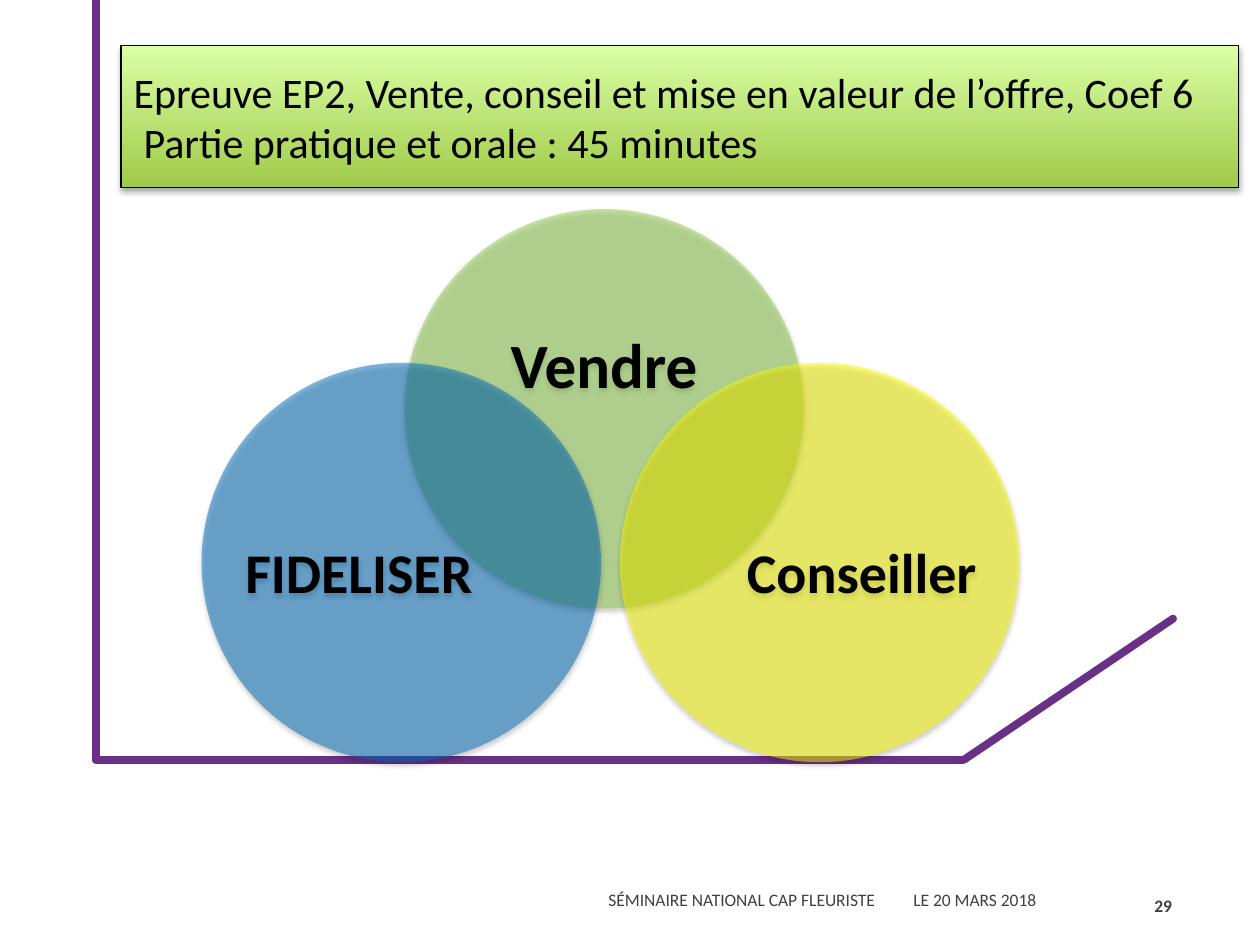
import pptx
import pptx.dml.color
import pptx.enum.dml
import pptx.enum.shapes
import pptx.enum.text
import pptx.util
from lxml import etree
from pptx.oxml.ns import qn

Inches, Pt = pptx.util.Inches, pptx.util.Pt
RGBColor = pptx.dml.color.RGBColor
ALIGN = pptx.enum.text.PP_ALIGN

BLACK = RGBColor(0x00, 0x00, 0x00)
GRAY = RGBColor(0x40, 0x40, 0x40)
PURPLE = RGBColor(0x68, 0x30, 0x86)
GREEN = RGBColor(0x92, 0xD0, 0x50)
YELLOW = RGBColor(0xFF, 0xFF, 0x00)
BLUE = RGBColor(0x00, 0x70, 0xC0)
TITLE_DARK = RGBColor(0xA0, 0xCA, 0x4A)
TITLE_LIGHT = RGBColor(0xDA, 0xFF, 0xA5)

# Content
TITLE = ["Epreuve EP2, Vente, conseil et mise en valeur de l’offre, Coef 6",
         "Partie pratique et orale : 45 minutes"]
FOOTER = "SÉMINAIRE NATIONAL CAP FLEURISTE\tLE 20 MARS 2018"
PAGE_NUMBER = "29"
FRAME_LINES = [(0.76, 6.03, 7.64, 6.03), (7.65, 6.03, 9.31, 4.91), (0.76, 6.02, 0.76, 0)]
DIAMETER = 3.17
# Label, colour, left, top, size, text margins measured from the circle's bounds
CIRCLES = [
    ("Vendre", GREEN, 3.21, 1.66, 36, (0.42, 0.55, 0.42, 1.19)),
    ("Conseiller", YELLOW, 4.92, 2.88, 32, (0.97, 0.82, 0.3, 0.61)),
    ("FIDELISER", BLUE, 1.6, 2.88, 32, (0.3, 0.82, 0.97, 0.61)),
]
# An oval's text area is the square inscribed in it
OVAL_INSET = DIAMETER * (1 - 0.5 ** 0.5) / 2


def write_text(shape, lines, size, color=BLACK, bold=False, align=ALIGN.LEFT,
               margins=(0.1, 0.05, 0.1, 0.05), spacing=None):
    frame = shape.text_frame
    frame.word_wrap = True
    frame.auto_size = pptx.enum.text.MSO_AUTO_SIZE.NONE
    frame.vertical_anchor = pptx.enum.text.MSO_ANCHOR.MIDDLE
    (frame.margin_left, frame.margin_top,
     frame.margin_right, frame.margin_bottom) = [Inches(value) for value in margins]
    frame.text = "\n".join(lines)
    for paragraph in frame.paragraphs:
        paragraph.alignment = align
        paragraph.line_spacing = spacing
        for run in paragraph.runs:
            run.font.name = "Calibri"
            run.font.size = Pt(size)
            run.font.bold = bold
            run.font.color.rgb = color


def add_shadow(shape, opacity, blur, distance):
    shape.shadow.inherit = False
    effects = shape._element.spPr.find(qn("a:effectLst"))
    shadow = etree.SubElement(effects, qn("a:outerShdw"), blurRad=str(Pt(blur)),
                              dist=str(Pt(distance)), dir="5400000", rotWithShape="0")
    color = etree.SubElement(shadow, qn("a:srgbClr"), val=str(BLACK))
    etree.SubElement(color, qn("a:alpha"), val=str(opacity * 1000))


def add_frame_line(slide, ends):
    line = slide.shapes.add_connector(pptx.enum.shapes.MSO_CONNECTOR.STRAIGHT,
                                      *[Inches(value) for value in ends])
    line.line.color.rgb = PURPLE
    line.line.width = Pt(4.5)
    line.line._ln.set("cap", "rnd")
    etree.SubElement(line._element.spPr, qn("a:effectLst"))


def add_circle(slide, label, color, left, top, size, margins):
    circle = slide.shapes.add_shape(pptx.enum.shapes.MSO_SHAPE.OVAL, Inches(left),
                                    Inches(top), Inches(DIAMETER), Inches(DIAMETER))
    circle.fill.solid()
    circle.fill.fore_color.rgb = color
    fill_color = circle._element.spPr.find(qn("a:solidFill"))[0]
    etree.SubElement(fill_color, qn("a:alpha"), val="50000")
    circle.line.fill.background()
    add_shadow(circle, 38, 3.1, 1.6)
    write_text(circle, [label], size, bold=True, align=ALIGN.CENTER, spacing=0.9,
               margins=[value - OVAL_INSET for value in margins])


def format_title(title):
    title.left, title.top = Inches(0.96), Inches(0.36)
    title.width, title.height = Inches(8.87), Inches(1.13)
    title.fill.gradient()
    title.fill.gradient_angle = 90
    for stop, color in zip(title.fill.gradient_stops, (TITLE_DARK, TITLE_LIGHT)):
        stop.color.rgb = color
    title.line.color.rgb = BLACK
    title.line.width = Pt(0.75)
    add_shadow(title, 35, 3.1, 1.8)
    write_text(title, TITLE, 24)
    # The second line is slightly indented
    properties = title.text_frame.paragraphs[1]._p.get_or_add_pPr()
    properties.set("marL", str(Inches(0.08)))
    properties.set("indent", "0")


def add_footer(slide):
    footer = slide.shapes.add_textbox(Inches(4.73), Inches(6.93), Inches(3.75), Inches(0.4))
    write_text(footer, [FOOTER], 10, GRAY, spacing=Pt(13.2))
    tabs = etree.SubElement(footer.text_frame.paragraphs[0]._p.get_or_add_pPr(),
                            qn("a:tabLst"))
    etree.SubElement(tabs, qn("a:tab"), pos=str(Inches(2.42)), algn="l")
    number = slide.shapes.add_textbox(Inches(9.02), Inches(6.99), Inches(0.38), Inches(0.4))
    write_text(number, [PAGE_NUMBER], 10, GRAY, bold=True, align=ALIGN.RIGHT)


def main():
    presentation = pptx.Presentation()
    presentation.slide_width, presentation.slide_height = Inches(10), Inches(7.5)
    slide = presentation.slides.add_slide(presentation.slide_layouts[5])

    # Frame and footer
    for ends in FRAME_LINES:
        add_frame_line(slide, ends)
    add_footer(slide)

    # Overlapping circles
    for circle in CIRCLES:
        add_circle(slide, *circle)

    # Title banner
    format_title(slide.shapes.title)
    presentation.save("out.pptx")


if __name__ == "__main__":
    main()
